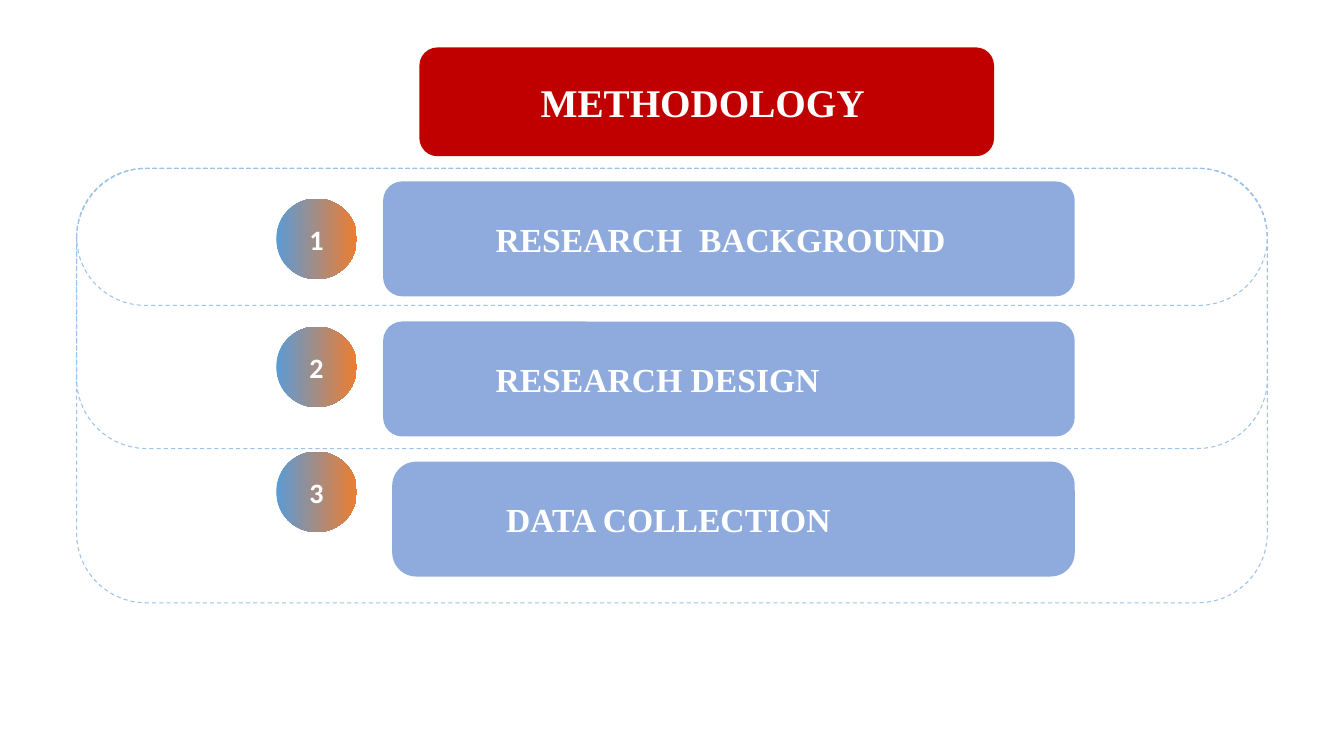
from pptx import Presentation
from pptx.dml.color import RGBColor
from pptx.enum.dml import MSO_LINE
from pptx.enum.shapes import MSO_SHAPE
from pptx.enum.text import MSO_ANCHOR, PP_ALIGN
from pptx.util import Emu, Pt

EMU_PER_PX = 9144
COLORS = {
    "frame": "9DC3E6",
    "bar": "8FAADC",
    "banner": "C00000",
    "badge_start": "5B9BD5",
    "badge_end": "ED7D31",
    "text": "FFFFFF",
}


def px(value):
    return Emu(value * EMU_PER_PX)


def color(name):
    return RGBColor.from_string(COLORS[name])


class SlideBuilder:
    heading_font = "Times New Roman"
    number_font = "Calibri"

    def __init__(self, presentation):
        self.slide = presentation.slides.add_slide(presentation.slide_layouts[6])

    def add_shape(self, kind, box, corner=None):
        shape = self.slide.shapes.add_shape(kind, *map(px, box))
        shape.shadow.inherit = False
        if corner is not None:
            shape.adjustments[0] = corner
        return shape

    def set_label(self, shape, text, font_name, size, align, insets=(10, 10), wrap=True):
        frame = shape.text_frame
        frame.word_wrap = wrap
        frame.vertical_anchor = MSO_ANCHOR.MIDDLE
        frame.margin_left, frame.margin_right = map(px, insets)
        frame.margin_top = frame.margin_bottom = px(5)
        paragraph = frame.paragraphs[0]
        paragraph.text = text
        paragraph.alignment = align
        paragraph.font.name = font_name
        paragraph.font.size = Pt(size)
        paragraph.font.bold = True
        paragraph.font.color.rgb = color("text")

    def frame(self, box, corner):
        shape = self.add_shape(MSO_SHAPE.ROUNDED_RECTANGLE, box, corner)
        shape.fill.background()
        shape.line.color.rgb = color("frame")
        shape.line.width = Pt(0.75)
        shape.line.dash_style = MSO_LINE.DASH

    def panel(self, box, text, fill, size, align, insets, corner=None):
        shape = self.add_shape(MSO_SHAPE.ROUNDED_RECTANGLE, box, corner)
        shape.fill.solid()
        shape.fill.fore_color.rgb = color(fill)
        shape.line.fill.background()
        self.set_label(shape, text, self.heading_font, size, align, insets)

    def badge(self, box, text):
        shape = self.add_shape(MSO_SHAPE.OVAL, box)
        shape.fill.gradient()
        shape.fill.gradient_angle = 0
        stops = zip(shape.fill.gradient_stops, ("badge_start", "badge_end"))
        for position, (stop, name) in enumerate(stops):
            stop.position = position
            stop.color.rgb = color(name)
        shape.line.fill.background()
        self.set_label(shape, text, self.number_font, 20, PP_ALIGN.CENTER, wrap=False)


def main():
    presentation = Presentation()
    presentation.slide_width = px(1333)
    presentation.slide_height = px(750)
    builder = SlideBuilder(presentation)

    for height, corner in ((136, 0.5), (278, 0.25), (431, 0.16)):
        builder.frame((76, 167, 1181, height), corner)

    bar_right, first_bar_top, bar_pitch = 1066, 180, 139
    steps = (
        ("RESEARCH  BACKGROUND", 380, 197, None),
        ("RESEARCH DESIGN", 380, 324, None),
        ("DATA COLLECTION", 389, 448, 0.21),
    )
    for index, (title, left, badge_top, corner) in enumerate(steps):
        top = first_bar_top + index * bar_pitch
        builder.panel((left, top, bar_right - left, 114), title, "bar", 24,
                      PP_ALIGN.LEFT, (106, 10), corner)
        builder.badge((274, badge_top, 80, 80), str(index + 1))

    builder.panel((416, 47, 570, 108), "METHODOLOGY", "banner", 28,
                  PP_ALIGN.CENTER, (10, 18))
    presentation.save("out.pptx")


if __name__ == "__main__":
    main()
